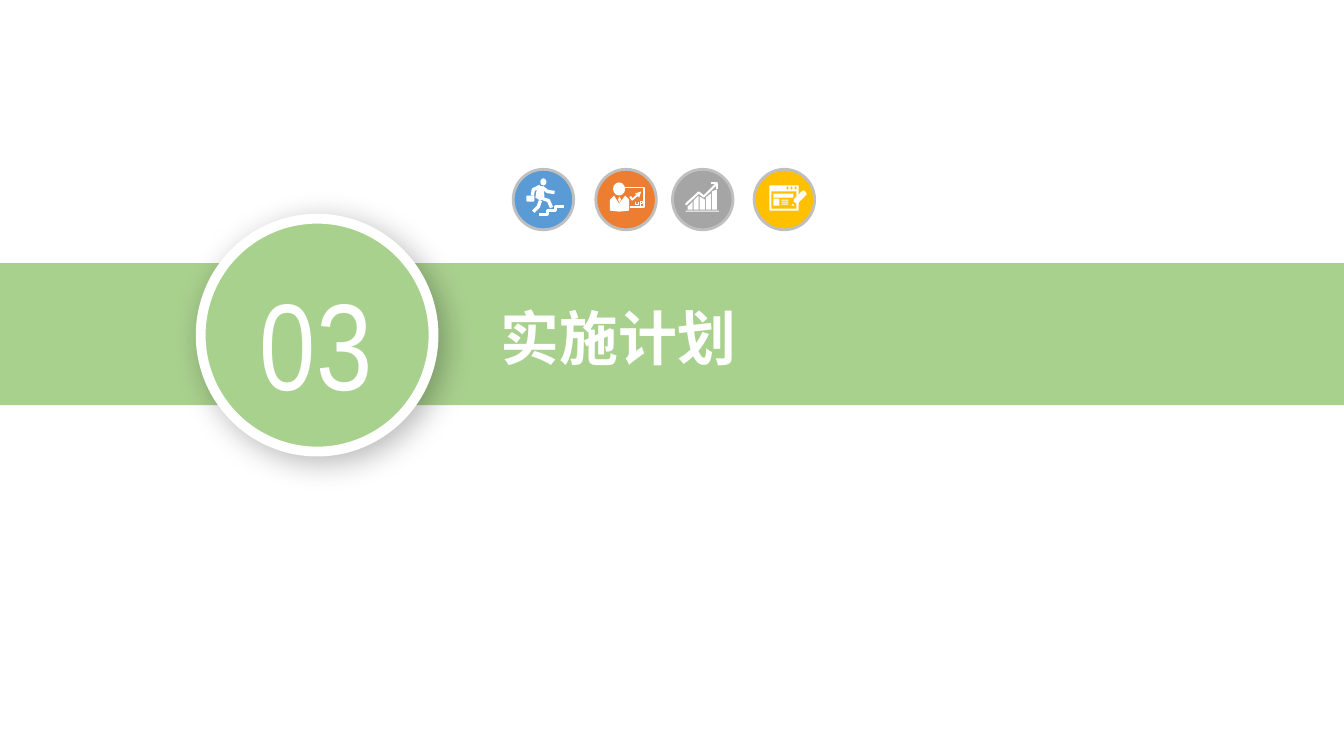
from lxml import etree
from pptx import Presentation
from pptx.dml.color import RGBColor
from pptx.enum.shapes import MSO_SHAPE
from pptx.enum.text import MSO_AUTO_SIZE, PP_ALIGN
from pptx.oxml.ns import qn
from pptx.util import Inches, Pt

RECT, OVAL, ROUNDED = MSO_SHAPE.RECTANGLE, MSO_SHAPE.OVAL, MSO_SHAPE.ROUNDED_RECTANGLE
TRIANGLE, DIAMOND = MSO_SHAPE.ISOSCELES_TRIANGLE, MSO_SHAPE.DIAMOND
COLORS = {
    "green": "A9D18E", "white": "FFFFFF", "ring": "BFBFBF", "shadow": "000000",
    "blue": "5B9BD5", "orange": "ED7D31", "yellow": "FFC000", "gray": "A5A5A5",
}


def add_filled(shapes, kind, box, fill="white", line=None, width=0):
    shape = shapes.add_shape(kind, *[Inches(v) for v in box])
    shape.shadow.inherit = False
    shape.fill.solid()
    shape.fill.fore_color.rgb = RGBColor.from_string(COLORS[fill])
    if line:
        shape.line.color.rgb = RGBColor.from_string(COLORS[line])
        shape.line.width = Pt(width)
    else:
        shape.line.fill.background()
    return shape


def add_path(shapes, points, stroke=None):
    """Draw white: an open line when a stroke width in points is given, else a filled outline."""
    corners = [(Inches(x), Inches(y)) for x, y in points]
    builder = shapes.build_freeform(*corners[0])
    builder.add_line_segments(corners[1:], close=stroke is None)
    path = builder.convert_to_shape()
    path.shadow.inherit = False
    white = RGBColor.from_string(COLORS["white"])
    if stroke:
        path.fill.background()
        path.line.color.rgb = white
        path.line.width = Pt(stroke)
    else:
        path.fill.solid()
        path.fill.fore_color.rgb = white
        path.line.fill.background()


prs = Presentation()
prs.slide_width, prs.slide_height = Inches(13.33), Inches(7.5)
slide = prs.slides.add_slide(prs.slide_layouts[6])

# Band and title
add_filled(slide.shapes, RECT, (0, 2.61, 13.33, 1.41), "green")
title = slide.shapes.add_textbox(Inches(4.87), Inches(2.94), Inches(4.72), Inches(0.81))

# One group with a ringed disc per icon
icons = []
for disc_left, color in [(5.09, "blue"), (5.91, "orange"), (7.48, "yellow"), (6.67, "gray")]:
    icon = slide.shapes.add_group_shape().shapes
    add_filled(icon, OVAL, (disc_left, 1.68, 0.6, 0.6), color, "ring", 2)
    icons.append(icon)
climber, presenter, form, growth = icons

# Climber: a runner with a briefcase above three steps
LIMB = 2.4
head, briefcase = (5.36, 1.77, 0.06, 0.07), (5.22, 1.94, 0.08, 0.06)
torso = [(5.33, 1.84), (5.39, 1.85), (5.4, 1.95), (5.36, 1.99), (5.31, 1.96)]
back_arm = [(5.36, 1.85), (5.29, 1.88), (5.28, 1.94)]
front_arm = [(5.38, 1.86), (5.43, 1.9), (5.5, 1.91)]
front_leg = [(5.35, 1.96), (5.44, 1.99), (5.47, 2.06)]
back_leg = [(5.36, 1.99), (5.34, 2.05), (5.29, 2.1)]
add_filled(climber, OVAL, head)
add_filled(climber, ROUNDED, briefcase)
add_path(climber, torso)
for limb in (back_arm, front_arm, front_leg, back_leg):
    add_path(climber, limb, LIMB)
stairs = []
for step in range(3):
    tread_left, tread_y = 5.35 + 0.08 * step, 2.13 - 0.04 * step
    stairs += [(tread_left, tread_y), (tread_left + 0.08, tread_y)]
add_path(climber, stairs, 1.8)

# Presenter: a person in front of a board with an arrow and the letters U and P
board = [(6.2, 1.86), (6.39, 1.86), (6.39, 2.05), (6.25, 2.05)]
suit = [(6.05, 2.09), (6.05, 1.98), (6.09, 1.94), (6.14, 2.02), (6.2, 1.94),
        (6.24, 1.98), (6.24, 2.09), (6.14, 2.1)]
board_arrow = [(6.25, 1.95), (6.27, 1.98), (6.33, 1.93)]
arrow_tip = [(6.3, 1.92), (6.36, 1.9), (6.34, 1.96)]
letter_u = [(6.3, 2), (6.3, 2.03), (6.33, 2.03), (6.33, 2)]
letter_p = [(6.35, 2.04), (6.35, 2), (6.37, 2), (6.37, 2.02), (6.35, 2.02)]
add_filled(presenter, OVAL, (6.08, 1.81, 0.12, 0.13))
add_filled(presenter, DIAMOND, (6.13, 1.95, 0.03, 0.06))
for outline in (suit, arrow_tip):
    add_path(presenter, outline)
for line, stroke in [(board, 1.4), (board_arrow, 1.4), (letter_u, 0.5), (letter_p, 0.5)]:
    add_path(presenter, line, stroke)

# Form: a window with fields and a pencil
add_filled(form, RECT, (7.63, 1.84, 0.29, 0.25))
add_filled(form, RECT, (7.65, 1.9, 0.25, 0.17), "yellow")
for dot in range(3):
    add_filled(form, OVAL, (7.8 + 0.04 * dot, 1.85, 0.02, 0.03), "yellow")
heading, thumbnail = (7.67, 1.92, 0.2, 0.04), (7.67, 1.97, 0.06, 0.07)
text_rows = [(7.75, 1.98 + 0.02 * row, 0.07, 0.01) for row in range(3)]
for field in (heading, thumbnail, *text_rows):
    add_filled(form, RECT, field)
add_filled(form, TRIANGLE, (7.85, 2.02, 0.03, 0.02))
pencil = [(7.95, 1.9), (7.87, 1.98), (7.87, 2), (7.9, 2.02), (7.91, 2.02), (7.99, 1.94)]
eraser = [(7.99, 1.94), (8, 1.93), (8, 1.92), (7.98, 1.89), (7.96, 1.89), (7.95, 1.9)]
for outline in (pencil, eraser):
    add_path(form, outline)

# Growth: five bars with slanted tops below a rising arrow
BAR_FOOT, BAR_WIDTH, BAR_STEP = 2.08, 0.05, 0.06
bar_tops = [(2.05, 2), (1.99, 1.94), (1.95, 1.98), (1.96, 1.92), (1.9, 1.88)]
for i, (left_top, right_top) in enumerate(bar_tops):
    left = 6.82 + BAR_STEP * i
    right = left + BAR_WIDTH
    add_path(growth, [(left, BAR_FOOT), (left, left_top), (right, right_top), (right, BAR_FOOT)])
add_filled(growth, RECT, (6.8, 2.09, 0.33, 0.01))
trend = [(6.8, 2.03), (6.93, 1.91), (6.98, 1.95), (7.11, 1.82)]
trend_tip = [(7.05, 1.82), (7.11, 1.82), (7.11, 1.88)]
for line in (trend, trend_tip):
    add_path(growth, line, 1.5)

# Section number in a ringed circle with a soft shadow
badge = slide.shapes.add_group_shape().shapes
circle = add_filled(badge, OVAL, (1.99, 2.17, 2.31, 2.31), "green", "white", 7)
effects = circle._element.spPr.find(qn("a:effectLst"))
shadow = etree.SubElement(effects, qn("a:outerShdw"), blurRad=str(Pt(22)), dist=str(Pt(6)),
                          dir=str(45 * 60000), algn="tl", rotWithShape="0")
shade = etree.SubElement(shadow, qn("a:srgbClr"), val=COLORS["shadow"])
etree.SubElement(shade, qn("a:alpha"), val="28000")
number = badge.add_textbox(Inches(2.26), Inches(2.6), Inches(1.75), Inches(1.58))

for box, text, size, font, bold, align in [
    (title, "实施计划", 42, "Noto Sans CJK SC", True, PP_ALIGN.LEFT),
    (number, "03", 88, "Arial Narrow", False, PP_ALIGN.CENTER),
]:
    frame = box.text_frame
    frame.word_wrap = True
    frame.auto_size = MSO_AUTO_SIZE.SHAPE_TO_FIT_TEXT
    frame.text = text
    frame.paragraphs[0].alignment = align
    run = frame.paragraphs[0].runs[0]
    run.font.size, run.font.bold, run.font.name = Pt(size), bold, font
    run.font.color.rgb = RGBColor.from_string(COLORS["white"])
    etree.SubElement(run.font._element, qn("a:ea"), typeface=font)

prs.save("out.pptx")
